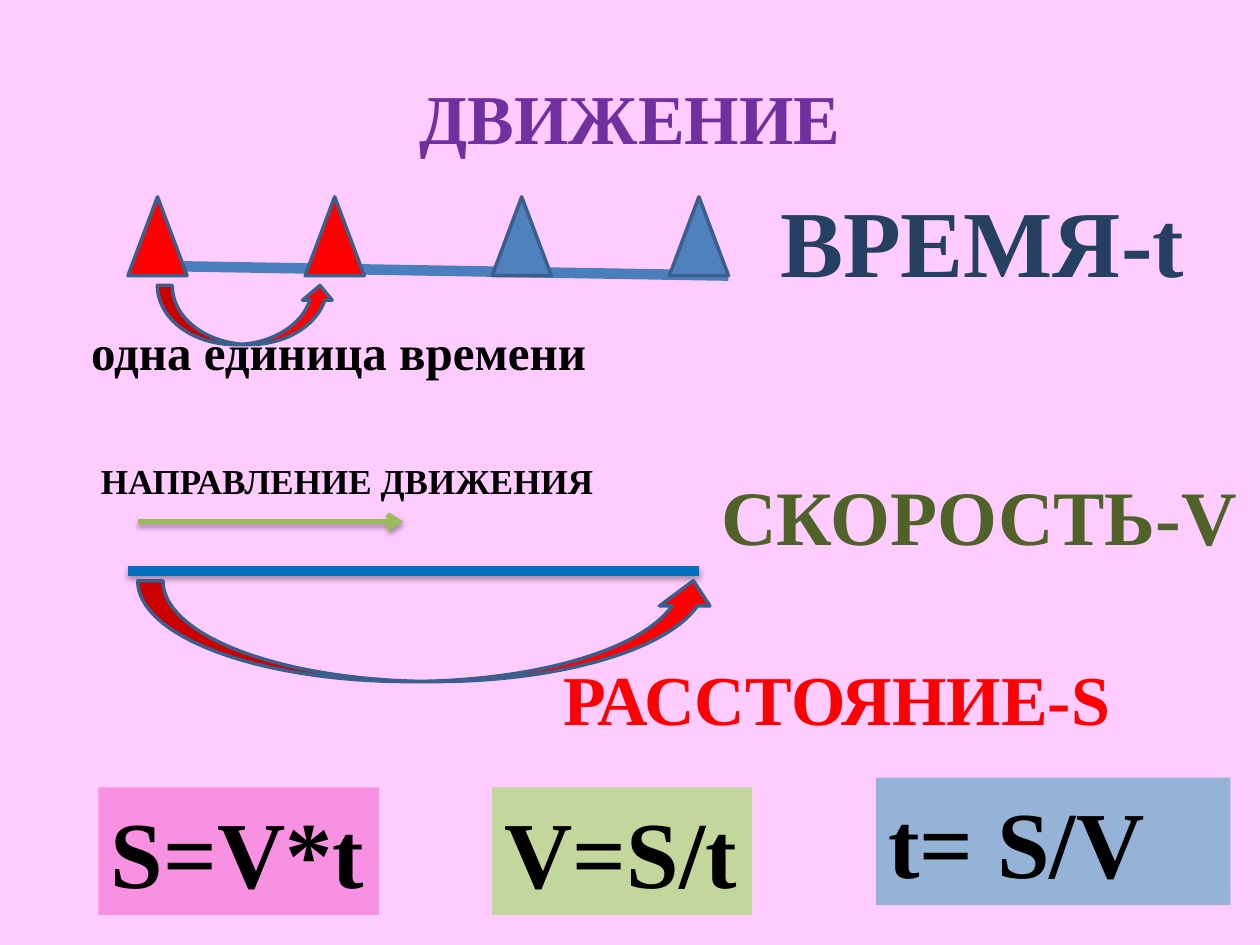
from lxml import etree
from pptx import Presentation
from pptx import util as u
from pptx.dml.color import RGBColor
from pptx.enum import shapes, text
from pptx.oxml import ns

BACKGROUND = RGBColor(0xFF, 0xCC, 0xFF)
PURPLE = RGBColor(0x70, 0x30, 0xA0)
NAVY = RGBColor(0x25, 0x40, 0x61)
OLIVE = RGBColor(0x4F, 0x62, 0x28)
BLACK = RGBColor(0, 0, 0)
RED = RGBColor(0xFF, 0, 0)
BLUE = RGBColor(0x4F, 0x81, 0xBD)
OUTLINE = RGBColor(0x3A, 0x5F, 0x8C)
TIME_LINE = RGBColor(0x4B, 0x7E, 0xBC)
PATH_BLUE = RGBColor(0x00, 0x70, 0xC0)
GREEN = RGBColor(0x9B, 0xBB, 0x59)
PINK_BOX = RGBColor(0xF9, 0x91, 0xE3)
GREEN_BOX = RGBColor(0xC3, 0xD6, 0x9B)
BLUE_BOX = RGBColor(0x95, 0xB3, 0xD7)

deck = Presentation()
deck.slide_width, deck.slide_height = u.Inches(10), u.Inches(7.5)
slide = deck.slides.add_slide(deck.slide_layouts[6])
slide.background.fill.solid()
slide.background.fill.fore_color.rgb = BACKGROUND

# The slide is a grid of 128 columns and 96 rows of square cells.
CELL = deck.slide_width / 128


def cells(*counts):
    return [u.Emu(round(count * CELL)) for count in counts]


def write(words, area, size, color=BLACK, fill=None, wrap=True,
          align=text.PP_ALIGN.LEFT, anchor=text.MSO_ANCHOR.TOP):
    label = slide.shapes.add_textbox(*cells(*area))
    if fill is not None:
        label.fill.solid()
        label.fill.fore_color.rgb = fill
    frame = label.text_frame
    frame.word_wrap = wrap
    frame.vertical_anchor = anchor
    paragraph = frame.paragraphs[0]
    paragraph.alignment = align
    run = paragraph.add_run()
    run.text = words
    run.font.name = "Times New Roman"
    run.font.size = u.Pt(size)
    run.font.bold = True
    run.font.color.rgb = color


# Lines: time axis, distance travelled, direction of movement
for ends, color, width, shadowed, arrow in [
    ((15, 27, 74, 28), TIME_LINE, 6, False, False),
    ((13, 58, 71, 58), PATH_BLUE, 6, True, False),
    ((14, 53, 41, 53), GREEN, 3, True, True),
]:
    line = slide.shapes.add_connector(shapes.MSO_CONNECTOR.STRAIGHT, *cells(*ends))
    line.line.color.rgb = color
    line.line.width = u.Pt(width)
    if arrow:
        etree.SubElement(line.line._get_or_add_ln(), ns.qn("a:tailEnd"), type="arrow")
    effects = etree.SubElement(line._element.spPr, ns.qn("a:effectLst"))
    if shadowed:
        shadow = etree.SubElement(effects, ns.qn("a:outerShdw"), blurRad="40000",
                                  dist="23000", dir="5400000", rotWithShape="0")
        shade = etree.SubElement(shadow, ns.qn("a:srgbClr"), val=str(BLACK))
        etree.SubElement(shade, ns.qn("a:alpha"), val="35000")

# Time marks and the curved arrows of one time unit and of the whole distance
MARK = shapes.MSO_SHAPE.ISOSCELES_TRIANGLE
CURVE = shapes.MSO_SHAPE.CURVED_UP_ARROW
for kind, area, color in [
    (MARK, (13, 20, 6, 8), RED),
    (MARK, (31, 20, 6, 8), RED),
    (MARK, (50, 20, 6, 8), BLUE),
    (MARK, (68, 20, 6, 8), BLUE),
    (CURVE, (16, 29, 18, 6), RED),
    (CURVE, (14, 59, 59, 10.24), RED),
]:
    figure = slide.shapes.add_shape(kind, *cells(*area))
    figure.shadow.inherit = False
    figure.fill.solid()
    figure.fill.fore_color.rgb = color
    figure.line.color.rgb = OUTLINE
    figure.line.width = u.Pt(2)

write("ДВИЖЕНИЕ", (6.4, 3.84, 115.2, 16), 40, PURPLE,
      align=text.PP_ALIGN.CENTER, anchor=text.MSO_ANCHOR.MIDDLE)
write("ВРЕМЯ-t", (78, 18, 46, 13), 54, NAVY)
write("одна единица времени", (8, 32, 67.3, 7.3), 28)
write("НАПРАВЛЕНИЕ ДВИЖЕНИЯ", (9, 46, 53, 5.6), 20)
write("СКОРОСТЬ-V", (72, 47, 56, 10.75), 44, OLIVE, wrap=False)
write("РАССТОЯНИЕ-S", (56, 66, 60, 9.9), 40, RED)

write("S=V*t", (10, 80, 28.5, 12.95), 54, fill=PINK_BOX, wrap=False)
write("V=S/t", (50, 80, 26.4, 12.95), 54, fill=GREEN_BOX, wrap=False)
write("t= S/V", (89, 79, 36, 12.95), 54, fill=BLUE_BOX)

deck.save("out.pptx")
